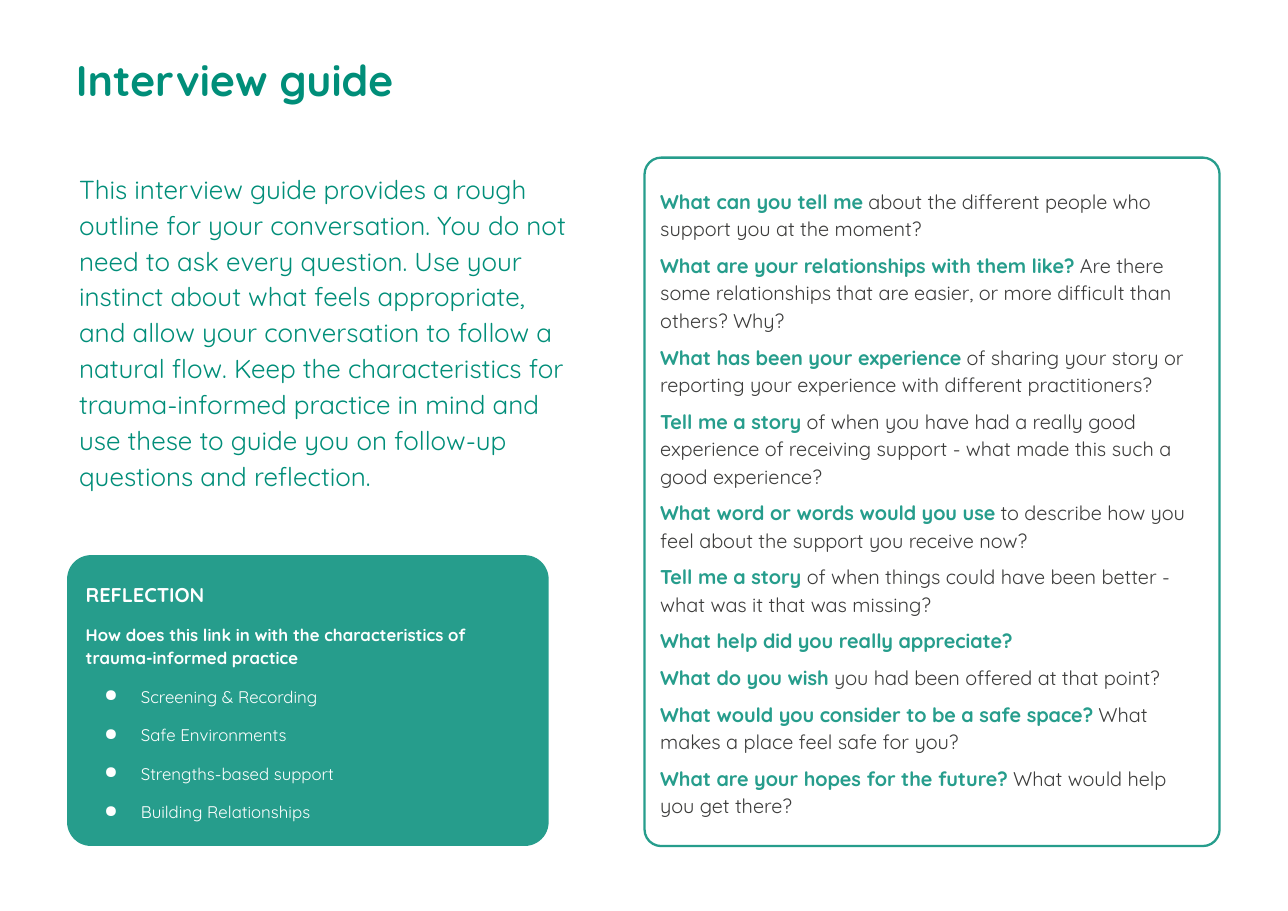
from dataclasses import dataclass

from lxml import etree
from pptx import Presentation
from pptx import util as u
from pptx.dml.color import RGBColor
from pptx.enum import shapes, text
from pptx.oxml.ns import qn

FONT = "Quicksand"
COLOURS = {"title": "008E79", "teal": "269D8C", "ink": "3C3C3B", "white": "FFFFFF"}


@dataclass
class Box:
    left: float
    top: float
    width: float
    height: float


@dataclass
class Card:
    box: Box
    fill: str
    corner: float


@dataclass
class Style:
    size: float
    colour: str
    bold: bool = False


@dataclass
class Question:
    lead: str
    rest: str = ""


TITLE_BOX = Box(42.5, 28.1, 315.4, 45.4)
INTRO_BOX = Box(44.6, 103, 335.5, 248.4)
QUESTION_CARD = Card(Box(421.2, 103, 375.8, 450), "white", 0.029)
REFLECTION_CARD = Card(Box(44.6, 363.6, 313.2, 188.6), "teal", 0.079)

INTRO = (
    "This interview guide provides a rough outline for your conversation. "
    "You do not need to ask every question. Use your instinct about what feels "
    "appropriate, and allow your conversation to follow a natural flow. Keep the "
    "characteristics for trauma-informed practice in mind and use these to guide "
    "you on follow-up questions and reflection."
)
QUESTIONS = [
    Question("What can you tell me",
             " about the different people who support you at the moment?"),
    Question("What are your relationships with them like? ",
             "Are there some relationships that are easier, or more difficult than others? Why?"),
    Question("What has been your experience",
             " of sharing your story or reporting your experience with different practitioners?"),
    Question("Tell me a story",
             " of when you have had a really good experience of receiving support - "
             "what made this such a good experience?"),
    Question("What word or words would you use",
             " to describe how you feel about the support you receive now?"),
    Question("Tell me a story ",
             "of when things could have been better - what was it that was missing?"),
    Question("What help did you really appreciate?"),
    Question("What do you wish", " you had been offered at that point?"),
    Question("What would you consider to be a safe space?",
             " What makes a place feel safe for you?"),
    Question("What are your hopes for the future? ", "What would help you get there?"),
]
CHARACTERISTICS = ["Screening & Recording", "Safe Environments",
                   "Strengths-based support", "Building Relationships"]


def rgb(name: str) -> RGBColor:
    return RGBColor.from_string(COLOURS[name])


def place(box: Box) -> list:
    return [u.Pt(value) for value in (box.left, box.top, box.width, box.height)]


def prepare_frame(frame) -> None:
    frame.word_wrap = True
    frame.margin_left = frame.margin_right = u.Pt(7.2)
    frame.margin_top = frame.margin_bottom = u.Pt(7.2)


def format_run(run, style: Style) -> None:
    run.font.name = FONT
    run.font.size = u.Pt(style.size)
    run.font.bold = style.bold
    run.font.color.rgb = rgb(style.colour)


def format_paragraph(paragraph, *styles: Style, before: float = 0,
                     after: float = 0, spacing: float = 1.15) -> None:
    paragraph.alignment = text.PP_ALIGN.LEFT
    paragraph.line_spacing = spacing
    paragraph.space_before = u.Pt(before)
    paragraph.space_after = u.Pt(after)
    for run, style in zip(paragraph.runs, styles):
        format_run(run, style)


def add_bullet(paragraph, colour: str) -> None:
    properties = paragraph._p.get_or_add_pPr()
    properties.set("marL", str(u.Pt(36)))
    properties.set("indent", str(u.Pt(-23.8)))
    bullet_colour = etree.SubElement(properties, qn("a:buClr"))
    etree.SubElement(bullet_colour, qn("a:srgbClr"), val=COLOURS[colour])
    etree.SubElement(properties, qn("a:buChar"), char="●")


def add_text(slide, box: Box, words: str, style: Style, **layout: float):
    frame = slide.shapes.add_textbox(*place(box)).text_frame
    prepare_frame(frame)
    frame.text = words
    format_paragraph(frame.paragraphs[0], style, **layout)
    return frame


def add_card(slide, card: Card):
    shape = slide.shapes.add_shape(shapes.MSO_SHAPE.ROUNDED_RECTANGLE, *place(card.box))
    shape.shadow.inherit = False
    shape.adjustments[0] = card.corner
    shape.fill.solid()
    shape.fill.fore_color.rgb = rgb(card.fill)
    shape.line.color.rgb = rgb("teal")
    shape.line.width = u.Pt(1.5)
    prepare_frame(shape.text_frame)
    shape.text_frame.vertical_anchor = text.MSO_ANCHOR.MIDDLE
    return shape.text_frame


def fill_questions(frame) -> None:
    lead_style, rest_style = Style(13, "teal", True), Style(13, "ink")
    for index, question in enumerate(QUESTIONS):
        paragraph = frame.add_paragraph() if index else frame.paragraphs[0]
        paragraph.text = question.lead
        if question.rest:
            paragraph.add_run().text = question.rest
        format_paragraph(paragraph, lead_style, rest_style, before=6)


def fill_reflection(frame) -> None:
    frame.text = "REFLECTION"
    format_paragraph(frame.paragraphs[0], Style(13, "white", True))
    prompt = frame.add_paragraph()
    prompt.text = "How does this link in with the characteristics of trauma-informed practice"
    format_paragraph(prompt, Style(11, "white", True), before=10)
    for characteristic in CHARACTERISTICS:
        paragraph = frame.add_paragraph()
        paragraph.text = characteristic
        after = 10 if characteristic == CHARACTERISTICS[-1] else 0
        format_paragraph(paragraph, Style(11, "white"), before=10, after=after)
        add_bullet(paragraph, "white")


def main() -> None:
    presentation = Presentation()
    presentation.slide_width, presentation.slide_height = u.Pt(841.68), u.Pt(595.44)
    slide = presentation.slides.add_slide(presentation.slide_layouts[6])

    # Title and introduction
    add_text(slide, TITLE_BOX, "Interview guide", Style(28, "title", True), spacing=1.0)
    intro = add_text(slide, INTRO_BOX, INTRO, Style(17, "title"), after=10)
    intro.auto_size = text.MSO_AUTO_SIZE.SHAPE_TO_FIT_TEXT

    # Cards
    fill_questions(add_card(slide, QUESTION_CARD))
    fill_reflection(add_card(slide, REFLECTION_CARD))

    presentation.save("out.pptx")


if __name__ == "__main__":
    main()
